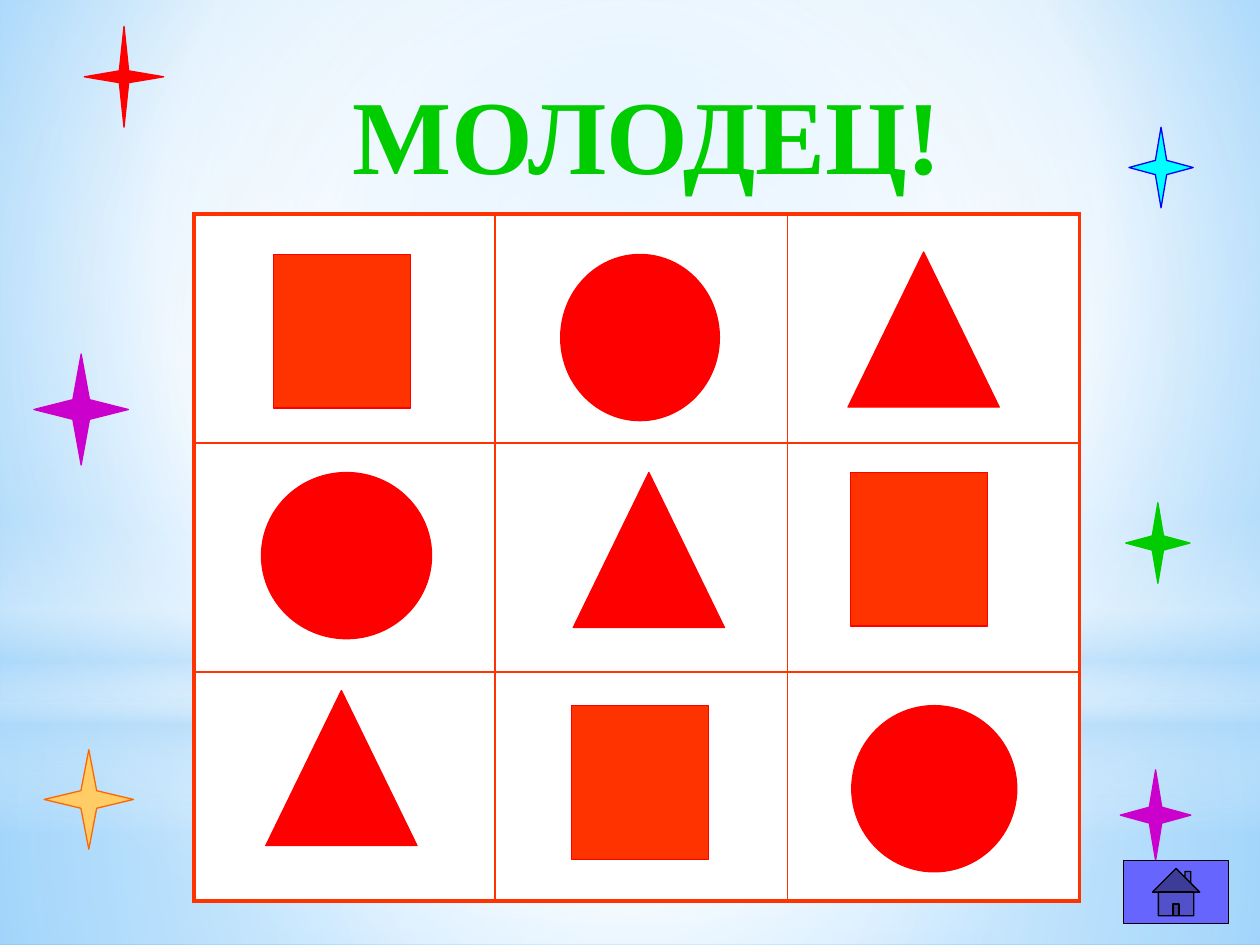
from typing import NamedTuple

from pptx import Presentation
from pptx.dml.color import RGBColor
from pptx.enum.shapes import MSO_SHAPE
from pptx.enum.text import MSO_ANCHOR, PP_ALIGN
from pptx.oxml import parse_xml
from pptx.oxml.ns import nsdecls, qn
from pptx.util import Pt

RECT, OVAL = MSO_SHAPE.RECTANGLE, MSO_SHAPE.OVAL
TRIANGLE, STAR = MSO_SHAPE.ISOSCELES_TRIANGLE, MSO_SHAPE.STAR_4_POINT
HOME = MSO_SHAPE.ACTION_BUTTON_HOME
MIDDLE, CENTER = MSO_ANCHOR.MIDDLE, PP_ALIGN.CENTER

WIDTH, HEIGHT = 720, 540
GRID_LEFT, GRID_TOP = 110.9, 122.4
COLUMN_WIDTHS = (172, 167, 167)
ROW_HEIGHT = 130.8
GRID_COLOR, RED, ORANGE_RED = "FF3300", "FF0000", "FF3300"
OUTER_BORDER, INNER_BORDER = 2.25, 1
CENTERED = (50, 50, 50, 50)


class Box(NamedTuple):
    left: float
    top: float
    width: float
    height: float


class Stop(NamedTuple):
    position: int
    color: str
    opacity: int = 100


class Layer(NamedTuple):
    kind: int
    box: Box
    stops: tuple
    radial: bool = True


class Figure(NamedTuple):
    kind: int
    box: Box
    fill: str = RED


class Star(NamedTuple):
    box: Box
    fill: str
    line: str
    waist: float = 0.125


BACKGROUND = (Stop(0, "9ED5FF"), Stop(60, "FFFFFF"), Stop(100, "5BB9FF"))
LAYERS = (
    Layer(RECT, Box(0, 402, WIDTH, 138),
          (Stop(0, "FFFFFF", 91), Stop(37, "FFFFFF", 76), Stop(100, "B4DCFA", 79))),
    Layer(RECT, Box(0, 0, WIDTH, 402),
          (Stop(0, "FFFFFF", 89), Stop(48, "FFFFFF", 62), Stop(100, "B4DCFA", 79))),
    Layer(RECT, Box(0, 296.6, WIDTH, 180),
          (Stop(0, "FFFFFF", 0), Stop(29, "FFFFFF", 30), Stop(45, "B4DCFA", 40),
           Stop(55, "FFFFFF", 26), Stop(65, "B4DCFA", 60), Stop(100, "FFFFFF", 0)),
          radial=False),
    Layer(OVAL, Box(0, 126, WIDTH, 402), (Stop(0, "FFFFFF"), Stop(56, "FFFFFF", 0))),
)

SQUARE_SIZE = (78.5, 87.8)
TRIANGLE_SIZE = (86.4, 88.6)
FIGURES = (
    Figure(RECT, Box(156.2, 145.4, *SQUARE_SIZE), ORANGE_RED),
    Figure(OVAL, Box(320.4, 145.4, 90.7, 95)),
    Figure(TRIANGLE, Box(484.6, 144, *TRIANGLE_SIZE)),
    Figure(OVAL, Box(149.4, 270, 97.2, 95)),
    Figure(TRIANGLE, Box(327.6, 270, *TRIANGLE_SIZE)),
    Figure(RECT, Box(486, 270, *SQUARE_SIZE), ORANGE_RED),
    Figure(TRIANGLE, Box(151.9, 394.6, *TRIANGLE_SIZE)),
    Figure(RECT, Box(326.5, 403.2, *SQUARE_SIZE), ORANGE_RED),
    Figure(OVAL, Box(486.7, 403.2, 94.3, 95)),
)
STARS = (
    Star(Box(48.2, 15.1, 45.4, 57.6), RED, RED, 0.083),
    Star(Box(643.3, 287.3, 36.7, 46.1), "00CC00", "00CC00"),
    Star(Box(19.4, 202.3, 54, 63.4), "CC00CC", "CC00CC"),
    Star(Box(25.2, 428.4, 51.1, 56.9), "FFCC66", "FF6600"),
    Star(Box(645.1, 72.7, 36.7, 46.1), "00FFFF", "0000FF"),
    Star(Box(640.2, 439.9, 40.3, 51.8), "CC00CC", "CC00CC"),
)


def rgb(code: str) -> RGBColor:
    return RGBColor.from_string(code)


def lengths(box: Box) -> list:
    return [Pt(value) for value in box]


def set_gradient(owner, stops: tuple, focus: tuple | None) -> None:
    """Replace the owner's gradient; without a focus it runs straight down."""
    stop_xml = "".join(
        f'<a:gs pos="{s.position * 1000}"><a:srgbClr val="{s.color}">'
        f'<a:alpha val="{s.opacity * 1000}"/></a:srgbClr></a:gs>' for s in stops)
    direction = '<a:lin ang="5400000" scaled="0"/>'
    if focus:
        sides = " ".join(f'{side}="{value * 1000}"' for side, value in zip("ltrb", focus))
        direction = f'<a:path path="circle"><a:fillToRect {sides}/></a:path>'
    old = owner.find(".//" + qn("a:gradFill"))
    old.getparent().replace(old, parse_xml(
        f'<a:gradFill rotWithShape="1" {nsdecls("a")}>'
        f'<a:gsLst>{stop_xml}</a:gsLst>{direction}</a:gradFill>'))


def add_layer(slide, layer: Layer) -> None:
    shape = slide.shapes.add_shape(layer.kind, *lengths(layer.box))
    shape.shadow.inherit = False
    shape.line.fill.background()
    shape.fill.gradient()
    set_gradient(shape.element, layer.stops, CENTERED if layer.radial else None)


def add_figure(slide, kind: int, box: Box, fill: str, line: str):
    shape = slide.shapes.add_shape(kind, *lengths(box))
    shape.shadow.inherit = False
    shape.fill.solid()
    shape.fill.fore_color.rgb = rgb(fill)
    shape.line.color.rgb = rgb(line)
    shape.line.width = Pt(0.75)
    return shape


def add_praise(slide) -> None:
    frame = slide.shapes.add_textbox(*lengths(Box(87.8, 31.7, 564.5, 87.8))).text_frame
    frame.word_wrap = True
    frame.vertical_anchor = MIDDLE
    paragraph = frame.paragraphs[0]
    paragraph.alignment = CENTER
    run = paragraph.add_run()
    run.text = "МОЛОДЕЦ!"
    for name, value in {"name": "Times New Roman", "size": Pt(60), "bold": True}.items():
        setattr(run.font, name, value)
    run.font.color.rgb = rgb("00CC00")


def set_borders(cell, outer_sides: dict) -> None:
    """Draw the four cell sides, heavier where a side lies on the table's edge."""
    properties = cell._tc.get_or_add_tcPr()
    for side, is_outer in outer_sides.items():
        width = Pt(OUTER_BORDER if is_outer else INNER_BORDER)
        properties.append(parse_xml(
            f'<a:ln{side} w="{width}" {nsdecls("a")}><a:solidFill>'
            f'<a:srgbClr val="{GRID_COLOR}"/></a:solidFill></a:ln{side}>'))


def add_grid(slide) -> None:
    count = len(COLUMN_WIDTHS)
    box = Box(GRID_LEFT, GRID_TOP, sum(COLUMN_WIDTHS), count * ROW_HEIGHT)
    table = slide.shapes.add_table(count, count, *lengths(box)).table
    for column, width in zip(table.columns, COLUMN_WIDTHS):
        column.width = Pt(width)
    last = count - 1
    for r, row in enumerate(table.rows):
        row.height = Pt(ROW_HEIGHT)
        for c, cell in enumerate(row.cells):
            set_borders(cell, {"L": c == 0, "R": c == last, "T": r == 0, "B": r == last})
            cell.fill.solid()
            cell.fill.fore_color.rgb = rgb("FFFFFF")


def main() -> None:
    deck = Presentation()
    deck.slide_width, deck.slide_height = Pt(WIDTH), Pt(HEIGHT)
    slide = deck.slides.add_slide(deck.slide_layouts[6])
    slide.background.fill.gradient()
    set_gradient(slide.element, BACKGROUND, (20, 10, 20, 60))
    for layer in LAYERS:
        add_layer(slide, layer)
    add_praise(slide)
    add_grid(slide)
    for figure in FIGURES:
        add_figure(slide, figure.kind, figure.box, figure.fill, RED)
    for star in STARS:
        add_figure(slide, STAR, star.box, star.fill, star.line).adjustments[0] = star.waist
    add_figure(slide, HOME, Box(642.2, 491.8, 59.8, 36), "6666FF", "000000")
    deck.save("out.pptx")


if __name__ == "__main__":
    main()
